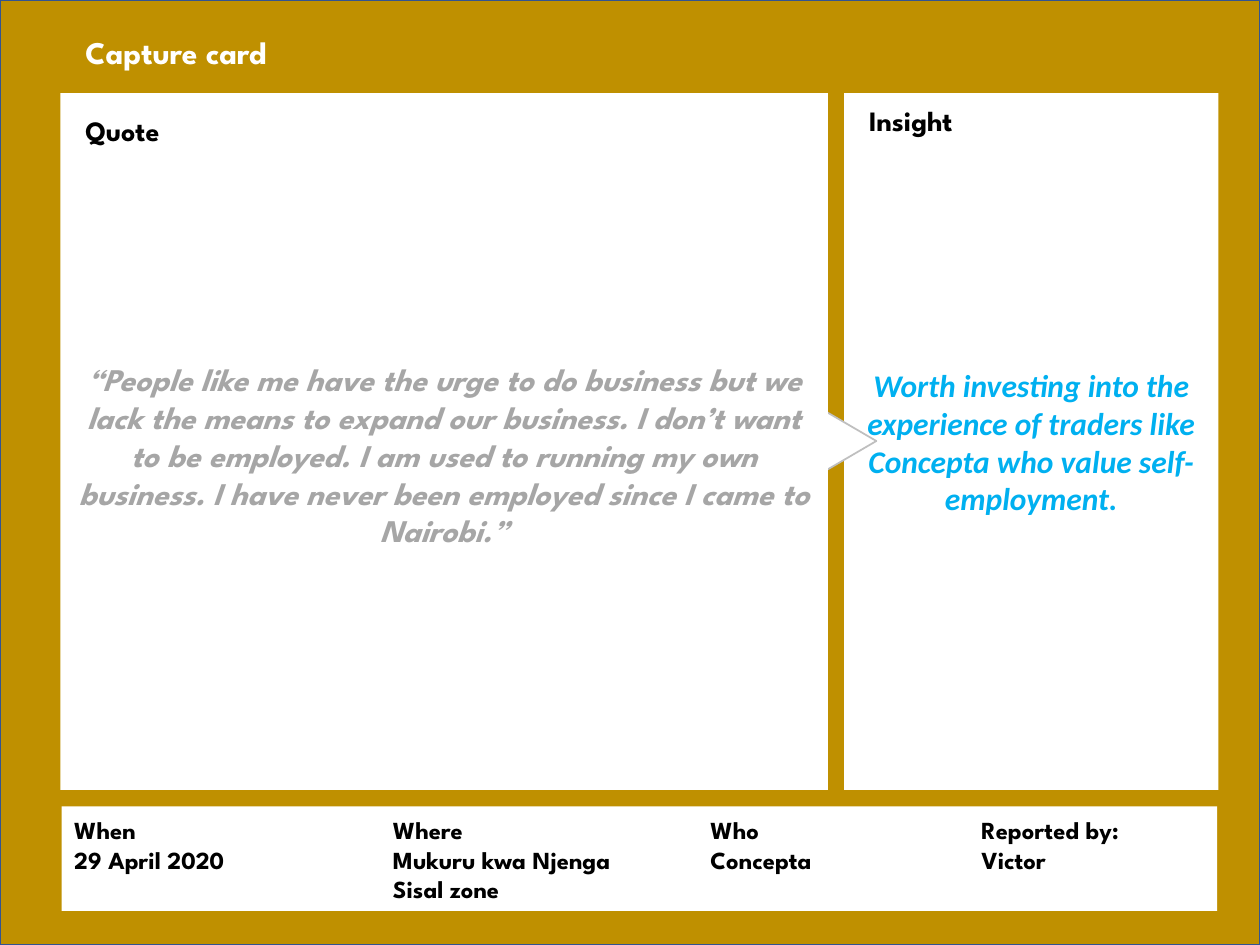
from dataclasses import dataclass
from typing import Optional

from pptx import Presentation, util as u
from pptx.dml.color import RGBColor
from pptx.enum import shapes, text

COLUMNS, ROWS = 100, 75
SLIDE_WIDTH, SLIDE_HEIGHT = u.Inches(10), u.Inches(7.5)


@dataclass(frozen=True)
class Theme:
    gold: str = "BF9000"
    frame: str = "325491"
    paper: str = "FFFFFF"
    edge: str = "BFBFBF"
    ink: str = "000000"
    quote: str = "A6A6A6"
    insight: str = "00B0F0"
    display_font: str = "League Spartan"
    body_font: str = "Calibri"
    large: int = 18
    heading: int = 16
    detail: int = 14


THEME = Theme()


@dataclass(frozen=True)
class Area:
    """Left, top, width and height in grid columns and rows."""
    column: float
    row: float
    columns: float
    rows: float

    def lengths(self) -> tuple[int, int, int, int]:
        return (round(SLIDE_WIDTH * self.column / COLUMNS),
                round(SLIDE_HEIGHT * self.row / ROWS),
                round(SLIDE_WIDTH * self.columns / COLUMNS),
                round(SLIDE_HEIGHT * self.rows / ROWS))


@dataclass(frozen=True)
class Panel:
    area: Area
    fill: str = THEME.paper
    line: Optional[str] = None
    kind: shapes.MSO_SHAPE = shapes.MSO_SHAPE.RECTANGLE
    rotation: float = 0


@dataclass(frozen=True)
class Style:
    size: int
    color: str = THEME.ink
    font: str = THEME.display_font
    italic: bool = False
    centered: bool = False


@dataclass(frozen=True)
class Label:
    area: Area
    lines: tuple[str, ...]
    style: Style
    wrap: bool = True


TITLE = Style(THEME.large, THEME.paper)
HEADING = Style(THEME.heading)
DETAIL = Style(THEME.detail)
QUOTE = Style(THEME.large, THEME.quote, italic=True, centered=True)
INSIGHT = Style(THEME.large, THEME.insight, THEME.body_font, True, True)

BACKDROP = Panel(Area(0, 0, COLUMNS, ROWS), THEME.gold, THEME.frame)
INSIGHT_PANEL = Panel(Area(67, 7.4, 29.7, 55.3))
POINTER = Panel(Area(65, 32.9, 4.9, 4.2), line=THEME.edge,
                kind=shapes.MSO_SHAPE.ISOSCELES_TRIANGLE, rotation=90)
QUOTE_PANEL = Panel(Area(4.8, 7.4, 60.9, 55.3))
DETAIL_PANEL = Panel(Area(4.9, 64, 91.7, 8.3))

INSIGHT_TEXT = ("Worth investing into the experience of traders like Concepta "
                "who value self-employment.")
QUOTE_TEXT = ("“People like me have the urge to do business but we lack the means "
              "to expand our business. I don’t want to be employed. I am used to "
              "running my own business. I have never been employed since I came "
              "to Nairobi.”")

HEADINGS = (
    Label(Area(5.8, 8.5, 58.8, 3.7), ("Quote",), HEADING),
    Label(Area(4.8, 28.1, 60.9, 16.2), (QUOTE_TEXT,), QUOTE),
    Label(Area(68, 7.7, 25.1, 3.7), ("Insight",), HEADING),
    Label(Area(5.8, 2.1, 58.8, 4), ("Capture card",), TITLE),
)
DETAILS = tuple(
    Label(Area(column, 64.2, columns, rows), lines, DETAIL, wrap=False)
    for column, columns, rows, lines in (
        (4.9, 14.1, 5.7, ("When", "29 April 2020")),
        (30.2, 21.2, 10.4, ("Where", "Mukuru kwa Njenga", "Sisal zone")),
        (55.4, 12.2, 5.7, ("Who", "Concepta")),
        (76.9, 14.3, 5.7, ("Reported by:", "Victor")),
    )
)


def write_lines(frame, lines: tuple[str, ...], style: Style) -> None:
    for index, line in enumerate(lines):
        paragraph = frame.add_paragraph() if index else frame.paragraphs[0]
        paragraph.alignment = (text.PP_ALIGN.CENTER if style.centered
                               else text.PP_ALIGN.LEFT)
        run = paragraph.add_run()
        run.text = line
        run.font.name = style.font
        run.font.size = u.Pt(style.size)
        run.font.bold = True
        run.font.italic = style.italic
        run.font.color.rgb = RGBColor.from_string(style.color)


def draw_panel(slide, panel: Panel):
    shape = slide.shapes.add_shape(panel.kind, *panel.area.lengths())
    shape.shadow.inherit = False
    shape.rotation = panel.rotation
    shape.fill.solid()
    shape.fill.fore_color.rgb = RGBColor.from_string(panel.fill)
    if panel.line:
        shape.line.color.rgb = RGBColor.from_string(panel.line)
        shape.line.width = u.Pt(1)
    else:
        shape.line.fill.background()
    return shape


def draw_label(slide, label: Label) -> None:
    frame = slide.shapes.add_textbox(*label.area.lengths()).text_frame
    frame.word_wrap = label.wrap
    frame.auto_size = text.MSO_AUTO_SIZE.SHAPE_TO_FIT_TEXT
    write_lines(frame, label.lines, label.style)


def main() -> None:
    presentation = Presentation()
    presentation.slide_width = SLIDE_WIDTH
    presentation.slide_height = SLIDE_HEIGHT
    slide = presentation.slides.add_slide(presentation.slide_layouts[6])

    draw_panel(slide, BACKDROP)
    insight = draw_panel(slide, INSIGHT_PANEL).text_frame
    insight.vertical_anchor = text.MSO_ANCHOR.MIDDLE
    write_lines(insight, (INSIGHT_TEXT,), INSIGHT)
    for panel in (POINTER, QUOTE_PANEL, DETAIL_PANEL):
        draw_panel(slide, panel)
    for label in HEADINGS + DETAILS:
        draw_label(slide, label)

    presentation.save("out.pptx")


if __name__ == "__main__":
    main()
